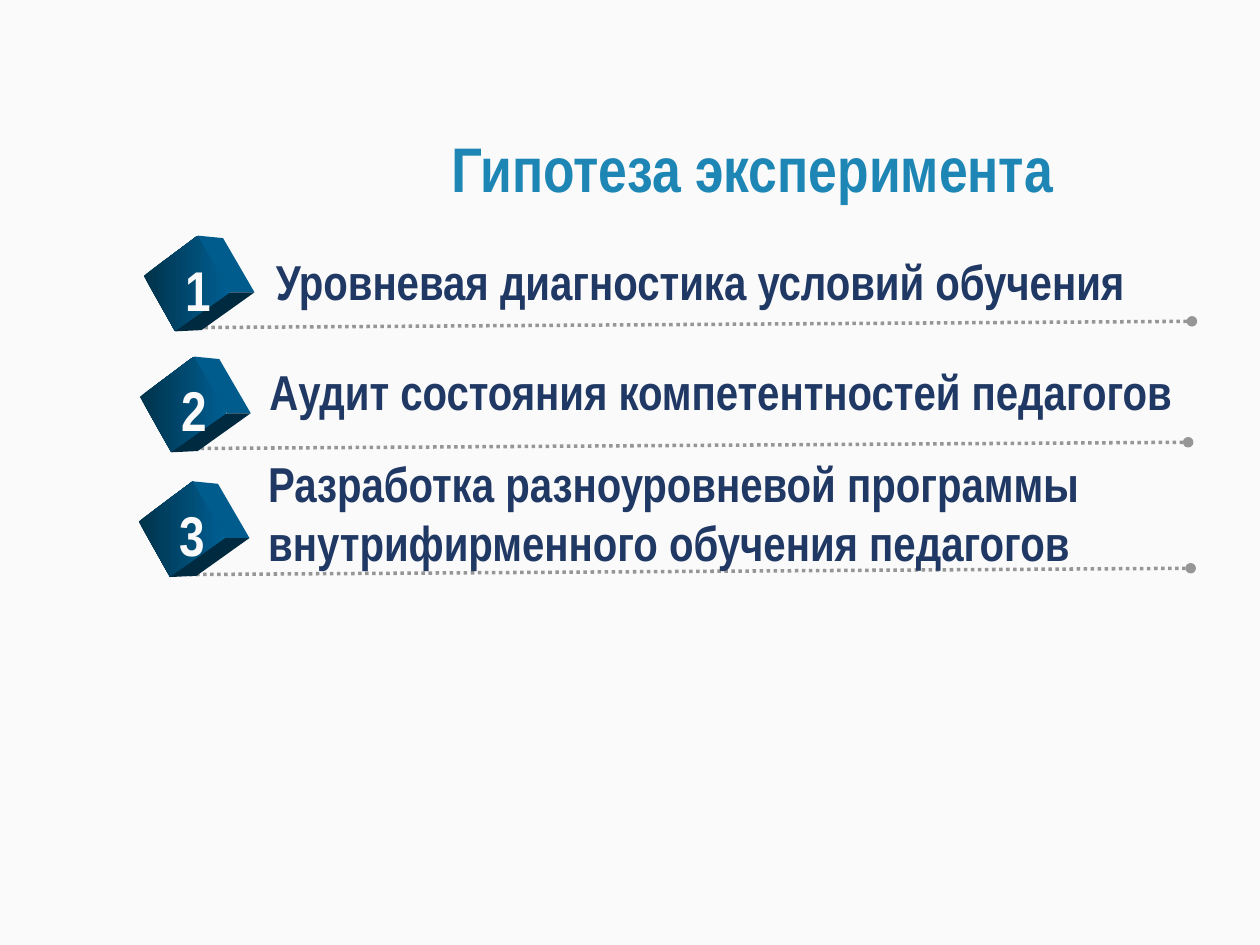
import pptx
import pptx.util
import pptx.dml.color
import pptx.enum.dml
import pptx.enum.shapes
import pptx.enum.text
import pptx.oxml.ns
import lxml.etree

Inches = pptx.util.Inches
Pt = pptx.util.Pt
qn = pptx.oxml.ns.qn
rgb = pptx.dml.color.RGBColor.from_string
anchor = pptx.enum.text.MSO_ANCHOR
align = pptx.enum.text.PP_ALIGN

COLORS = {
    "back": "FAFAFA",
    "title": "1E86B4",
    "text": "203864",
    "line": "969696",
    "dark": "00324A",
    "light": "005F93",
    "side": "005C8C",
    "base": "002A40",
}
FACES = [
    ("front", [(0, 32), (43, 0), (69, 45), (25, 76)]),
    ("side", [(43, 0), (63, 2), (88, 45), (69, 45)]),
    ("base", [(25, 76), (69, 45), (88, 45), (46, 75)]),
]
ROWS = [
    {"cube": (1.14, 1.87), "line": (1.51, 2.6), "num": (1.37, 1.98),
     "box": (2.09, 1.95, 7.05, 0.57),
     "text": ["Уровневая диагностика условий обучения"]},
    {"cube": (1.11, 2.83), "line": (1.48, 3.56), "num": (1.34, 2.93),
     "box": (2.04, 2.82, 7.5, 1.04),
     "text": ["Аудит состояния компетентностей педагогов"]},
    {"cube": (1.1, 3.82), "line": (1.5, 4.56), "num": (1.33, 3.92),
     "box": (2.03, 3.55, 6.81, 1.04),
     "text": ["Разработка разноуровневой программы",
              "внутрифирменного обучения педагогов"]},
]


def style(par, size, color):
    par.font.name = "Arial Narrow"
    par.font.size = Pt(size)
    par.font.bold = True
    par.font.color.rgb = rgb(COLORS[color])


def label(box, lines, size, color):
    frame = slide.shapes.add_textbox(*map(Inches, box)).text_frame
    frame.word_wrap = True
    frame.text = "\n".join(lines)
    for par in frame.paragraphs:
        style(par, size, color)


deck = pptx.Presentation()
deck.slide_width = Inches(10)
deck.slide_height = Inches(7.5)
slide = deck.slides.add_slide(deck.slide_layouts[5])
slide.background.fill.solid()
slide.background.fill.fore_color.rgb = rgb(COLORS["back"])

title = slide.shapes.title
title.left, title.top = Inches(1.94), Inches(0.23)
title.width, title.height = Inches(8.06), Inches(2.2)
frame = title.text_frame
frame.text = "Гипотеза эксперимента"
frame.vertical_anchor = anchor.BOTTOM
frame.margin_bottom = Inches(0.8)
frame.paragraphs[0].alignment = align.CENTER
style(frame.paragraphs[0], 36, "title")

for num, row in enumerate(ROWS, 1):
    x, y = row["line"]
    rule = slide.shapes.add_connector(
        pptx.enum.shapes.MSO_CONNECTOR.STRAIGHT,
        Inches(x), Inches(y), Inches(x + 7.95), Inches(y - 0.05))
    rule.line.color.rgb = rgb(COLORS["line"])
    rule.line.width = Pt(2)
    rule.line.dash_style = pptx.enum.dml.MSO_LINE.ROUND_DOT
    lxml.etree.SubElement(rule.line._ln, qn("a:tailEnd"), type="oval")
    lxml.etree.SubElement(rule._element.spPr, qn("a:effectLst"))

    left, top = map(Inches, row["cube"])
    for name, points in FACES:
        path = slide.shapes.build_freeform(*points[0], scale=Inches(0.01))
        path.add_line_segments(points[1:], close=True)
        face = path.convert_to_shape(left, top)
        face.shadow.inherit = False
        face.line.fill.background()
        if name == "front":
            face.fill.gradient()
            face.fill.gradient_angle = 0
            for stop, color in zip(face.fill.gradient_stops, ("dark", "light")):
                stop.color.rgb = rgb(COLORS[color])
        else:
            face.fill.solid()
            face.fill.fore_color.rgb = rgb(COLORS[name])

    label((*row["num"], 0.41, 0.64), [str(num)], 32, "back")
    label(row["box"], row["text"], 28, "text")

deck.save("out.pptx")
